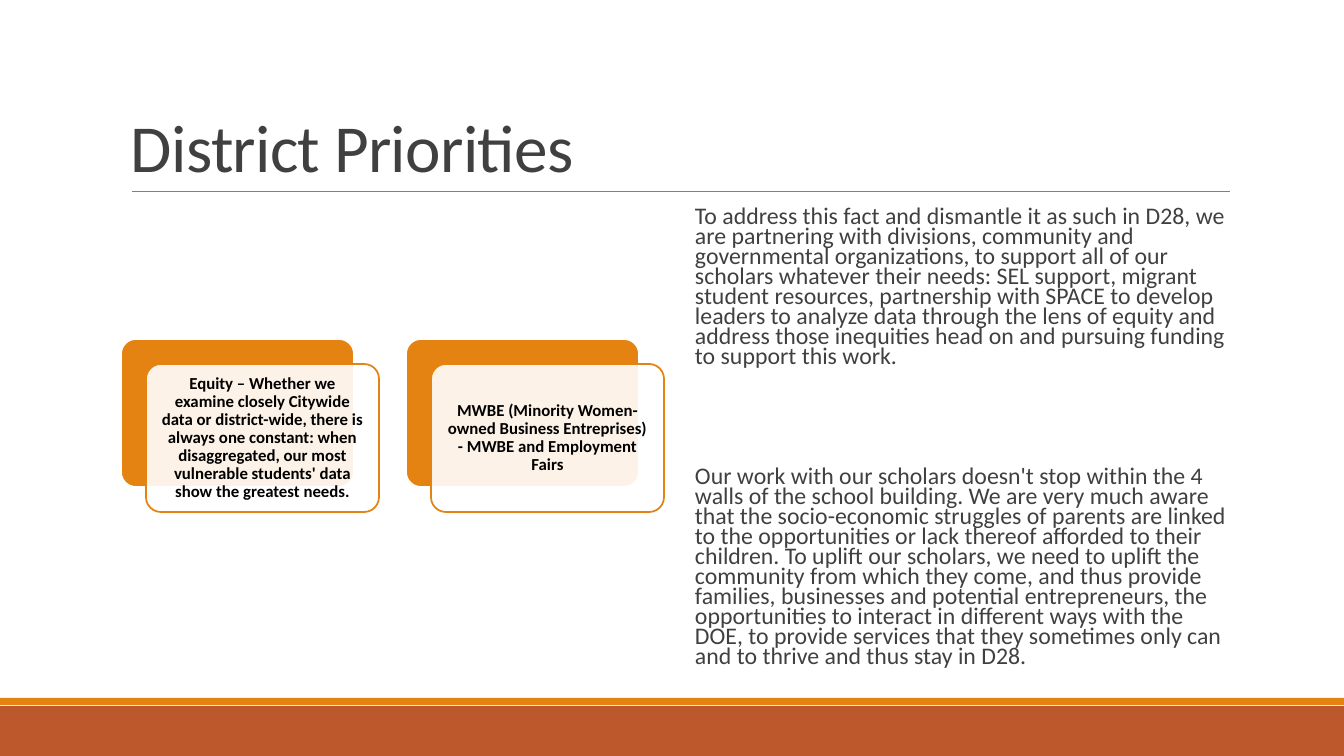
from lxml.etree import SubElement
from pptx import Presentation
from pptx.dml.color import RGBColor
from pptx.enum.shapes import MSO_CONNECTOR, MSO_SHAPE
from pptx.enum.text import MSO_ANCHOR, PP_ALIGN
from pptx.oxml.ns import qn
from pptx.util import Emu, Pt

COLORS = {
    "orange": "E48312",
    "rust": "BD582C",
    "rule": "808080",
    "text": "404040",
    "black": "000000",
    "white": "FFFFFF",
}
FONT = "Calibri"

PRIORITIES = [
    "Equity – Whether we examine closely Citywide data or district-wide, there is always "
    "one constant: when disaggregated, our most vulnerable students' data show the greatest needs.",
    "MWBE (Minority Women-owned Business Entreprises) - MWBE and Employment Fairs",
]
NARRATIVE = [
    "To address this fact and dismantle it as such in D28, we are partnering with divisions, "
    "community and governmental organizations, to support all of our scholars whatever their "
    "needs: SEL support, migrant student resources, partnership with SPACE to develop leaders "
    "to analyze data through the lens of equity and address those inequities head on and "
    "pursuing funding to support this work.",
    "Our work with our scholars doesn't stop within the 4 walls of the school building. We are "
    "very much aware that the socio-economic struggles of parents are linked to the "
    "opportunities or lack thereof afforded to their children. To uplift our scholars, we need "
    "to uplift the community from which they come, and thus provide families, businesses and "
    "potential entrepreneurs, the opportunities to interact in different ways with the DOE, to "
    "provide services that they sometimes only can and to thrive and thus stay in D28.",
]


def px(n):
    return Emu(round(n * 914400 / 100.8))


def rgb(name):
    return RGBColor.from_string(COLORS[name])


def add_box(s, kind, x, y, w, h, fill, line=None):
    sp = s.shapes.add_shape(kind, px(x), px(y), px(w), px(h))
    sp.shadow.inherit = False
    sp.fill.solid()
    sp.fill.fore_color.rgb = rgb(fill)
    if line:
        sp.line.color.rgb = rgb(line)
        sp.line.width = Pt(1.25)
    else:
        sp.line.fill.background()
    return sp


def add_rule(s, x1, x2, y):
    cn = s.shapes.add_connector(MSO_CONNECTOR.STRAIGHT, px(x1), px(y), px(x2), px(y))
    cn.line.color.rgb = rgb("rule")
    cn.line.width = Pt(0.5)
    SubElement(cn._element.spPr, qn("a:effectLst"))


def write(sp, texts, size, color, spacing, anchor, inset_x, inset_y,
          align=PP_ALIGN.LEFT, bold=False, gap=0):
    tf = sp.text_frame
    tf.word_wrap = True
    tf.vertical_anchor = anchor
    tf.margin_left = tf.margin_right = px(inset_x)
    tf.margin_top = tf.margin_bottom = px(inset_y)
    for i, text in enumerate(texts):
        p = tf.add_paragraph() if i else tf.paragraphs[0]
        p.text = text
        p.alignment = align
        p.line_spacing = spacing
        if i:
            p.space_before = Pt(gap)
        for r in p.runs:
            r.font.name = FONT
            r.font.size = Pt(size)
            r.font.bold = bold
            r.font.color.rgb = rgb(color)
    return tf


def add_title(s, text):
    sp = s.shapes.add_textbox(px(121), px(31), px(1109), px(160))
    tf = write(sp, [text], 48, "text", 0.85, MSO_ANCHOR.BOTTOM, 10, 5)
    tf.paragraphs[0].runs[0].font._element.set("spc", "-50")


def add_priority(s, x, y, text):
    w, h, offset = 233, 148, 25
    back = add_box(s, MSO_SHAPE.ROUNDED_RECTANGLE, x, y, w, h, "orange", "white")
    front = add_box(s, MSO_SHAPE.ROUNDED_RECTANGLE, x + offset, y + offset, w, h,
                    "white", "orange")
    for sp in (back, front):
        sp.adjustments[0] = 0.1
    clr = front._element.spPr.find(qn("a:solidFill"))[0]
    SubElement(clr, qn("a:alpha"), val="90000")
    write(front, [text], 12, "black", 0.9, MSO_ANCHOR.MIDDLE, 9, 9,
          PP_ALIGN.CENTER, bold=True)


def add_narrative(s, texts):
    sp = s.shapes.add_textbox(px(695), px(204), px(535), px(480))
    write(sp, texts, 17, "text", 0.7, MSO_ANCHOR.TOP, 0, 5, gap=71)


def main():
    prs = Presentation()
    prs.slide_width, prs.slide_height = px(1344), px(756)
    s = prs.slides.add_slide(prs.slide_layouts[6])
    add_box(s, MSO_SHAPE.RECTANGLE, 0, 706, 1344, 50, "rust")
    add_box(s, MSO_SHAPE.RECTANGLE, 0, 698, 1344, 7, "orange")
    add_rule(s, 132, 1230, 191)
    add_title(s, "District Priorities")
    for i, text in enumerate(PRIORITIES):
        add_priority(s, 121 + i * 285, 339, text)
    add_narrative(s, NARRATIVE)
    prs.save("out.pptx")


if __name__ == "__main__":
    main()
